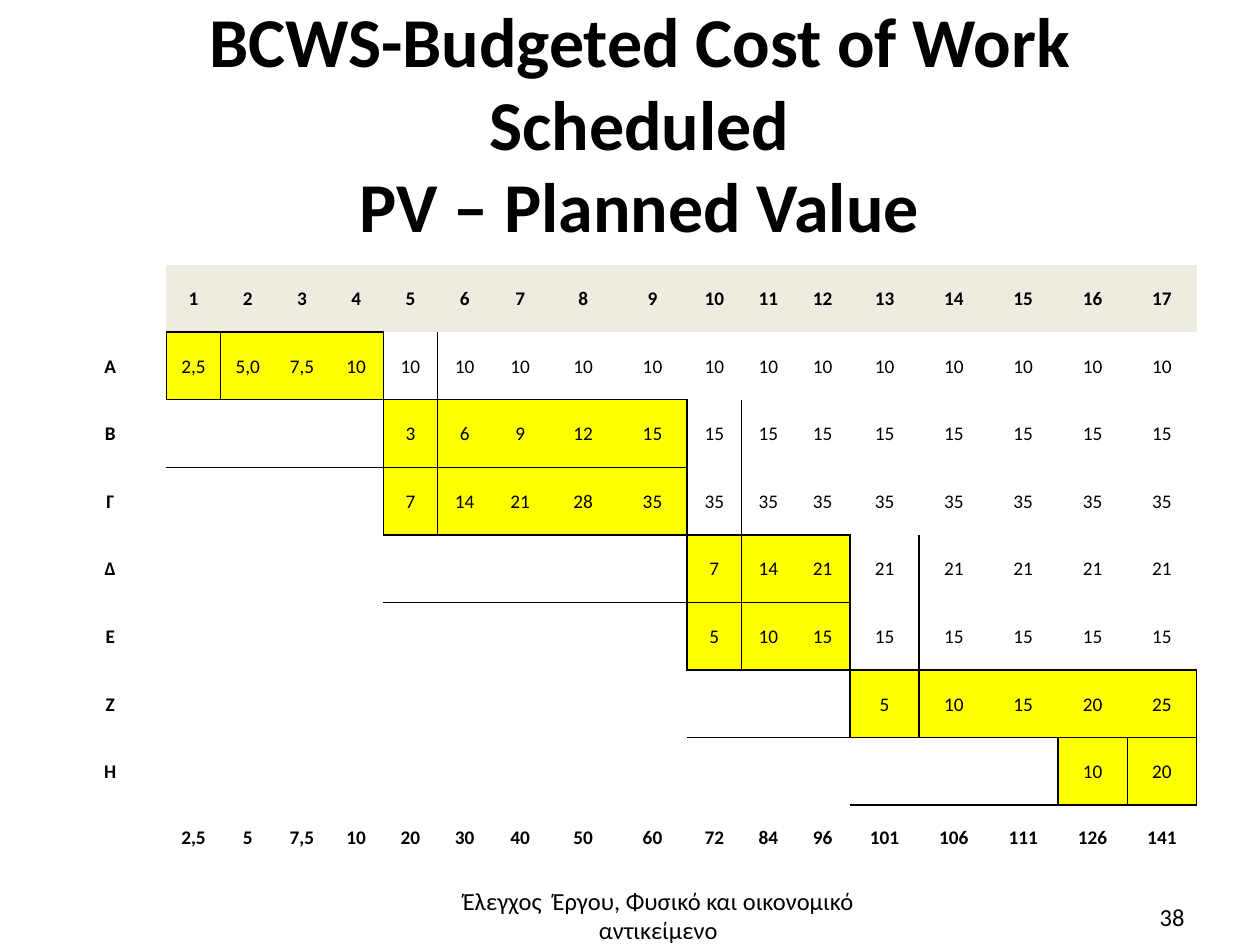
import pptx
import pptx.dml.color
import pptx.enum.text
import pptx.oxml
import pptx.oxml.ns
import pptx.util

Inches = pptx.util.Inches
ALIGN = pptx.enum.text.PP_ALIGN
ANCHOR = pptx.enum.text.MSO_ANCHOR

BLACK = pptx.dml.color.RGBColor(0x00, 0x00, 0x00)
HEADER_FILL = pptx.dml.color.RGBColor(0xEE, 0xEC, 0xE1)
ACTIVE_FILL = pptx.dml.color.RGBColor(0xFF, 0xFF, 0x00)
FONT = "Calibri"
NO_STYLE_NO_GRID = "{2D5ABB26-0587-4C30-8999-92F81FD0307C}"

PERIODS = 17
# Activity, first active period, cumulative cost in each active period
ACTIVITIES = [
    ("Α", 1, ["2,5", "5,0", "7,5", "10"]),
    ("Β", 5, ["3", "6", "9", "12", "15"]),
    ("Γ", 5, ["7", "14", "21", "28", "35"]),
    ("Δ", 10, ["7", "14", "21"]),
    ("Ε", 10, ["5", "10", "15"]),
    ("Ζ", 13, ["5", "10", "15", "20", "25"]),
    ("Η", 16, ["10", "20"]),
]
TOTALS = ["2,5", "5", "7,5", "10", "20", "30", "40", "50", "60",
          "72", "84", "96", "101", "106", "111", "126", "141"]
COLUMN_WIDTHS = ([0.89] + [0.43] * 6 + [0.45] + [0.55] * 2
                 + [0.43] * 3 + [0.55] * 5)
TOTALS_HEIGHT = 0.51

# Border element, row step and column step to the neighbour on that side
SIDES = [("lnL", 0, -1), ("lnR", 0, 1), ("lnT", -1, 0), ("lnB", 1, 0)]


def write_text(frame, text, size=14, bold=False, align=ALIGN.CENTER, spacing=None):
    para = frame.paragraphs[0]
    para.text = text
    para.alignment = align
    if spacing:
        para.line_spacing = spacing
    for span in para.runs:
        span.font.name = FONT
        span.font.size = pptx.util.Pt(size)
        span.font.bold = bold
        span.font.color.rgb = BLACK


def add_text_box(page, left, top, width, height):
    box = page.shapes.add_textbox(Inches(left), Inches(top), Inches(width), Inches(height))
    box.text_frame.word_wrap = True
    box.text_frame.auto_size = pptx.enum.text.MSO_AUTO_SIZE.NONE
    return box.text_frame


def add_title(page, left, top, width, height):
    frame = add_text_box(page, left, top, width, height)
    frame.vertical_anchor = ANCHOR.MIDDLE
    frame.margin_left = frame.margin_right = frame.margin_bottom = 0
    frame.margin_top = Inches(0.02)
    write_text(frame, "BCWS-Budgeted Cost of Work Scheduled\nPV – Planned Value",
               size=40, bold=True, spacing=0.98)


def schedule_rows():
    """Return the table's text, each finished activity keeping its last value."""
    rows = [[""] + [str(period) for period in range(1, PERIODS + 1)]]
    for label, start, costs in ACTIVITIES:
        after = PERIODS - (start - 1) - len(costs)
        rows.append([label] + [""] * (start - 1) + costs + [costs[-1]] * after)
    rows.append([""] + TOTALS)
    return rows


def is_active(row, column):
    if not 1 <= row <= len(ACTIVITIES):
        return False
    _, start, costs = ACTIVITIES[row - 1]
    return start <= column < start + len(costs)


def add_borders(cell, row, column):
    """Draw the lines where the active bar of an activity meets this cell."""
    properties = cell._tc.get_or_add_tcPr()
    for name, row_step, column_step in SIDES:
        here = is_active(row, column)
        beside = is_active(row + row_step, column + column_step)
        inside_bar = here and beside and column_step
        if (here or beside) and not inside_bar:
            properties.append(pptx.oxml.parse_xml(
                f'<a:{name} {pptx.oxml.ns.nsdecls("a")} w="12700">'
                f'<a:solidFill><a:srgbClr val="{BLACK}"/></a:solidFill></a:{name}>'))


def fill_cell(cell, row, column, text, bold):
    add_borders(cell, row, column)
    if is_active(row, column):
        cell.fill.solid()
        cell.fill.fore_color.rgb = ACTIVE_FILL
    elif row == 0 and column > 0:
        cell.fill.solid()
        cell.fill.fore_color.rgb = HEADER_FILL
    else:
        cell.fill.background()
    if text:
        cell.vertical_anchor = ANCHOR.MIDDLE
        cell.margin_left = cell.margin_right = cell.margin_top = Inches(0.01)
        cell.margin_bottom = 0
        write_text(cell.text_frame, text, size=11, bold=bold)


def add_schedule_table(page, left, top, width, height):
    rows = schedule_rows()
    last = len(rows) - 1
    table = page.shapes.add_table(len(rows), PERIODS + 1, Inches(left), Inches(top),
                                  Inches(width), Inches(height)).table
    table.first_row = table.horz_banding = False
    table._tbl.tblPr.find(pptx.oxml.ns.qn("a:tableStyleId")).text = NO_STYLE_NO_GRID
    for column, share in zip(table.columns, COLUMN_WIDTHS):
        column.width = Inches(share * width / sum(COLUMN_WIDTHS))
    for row in table.rows:
        row.height = Inches((height - TOTALS_HEIGHT) / last)
    table.rows[last].height = Inches(TOTALS_HEIGHT)
    for row, texts in enumerate(rows):
        for column, text in enumerate(texts):
            bold = row in (0, last) or column == 0
            fill_cell(table.cell(row, column), row, column, text, bold)


def add_footer(page, left, top, width, height):
    frame = add_text_box(page, left, top, width, height)
    write_text(frame, "Έλεγχος  Έργου, Φυσικό και οικονομικό αντικείμενο")


def add_page_number(page, left, top, width, height):
    frame = add_text_box(page, left, top, width, height)
    write_text(frame, "38", align=ALIGN.RIGHT)


def main():
    deck = pptx.Presentation()
    deck.slide_width = Inches(10)
    deck.slide_height = Inches(7.5)
    page = deck.slides.add_slide(deck.slide_layouts[6])
    add_title(page, 0.51, 0.09, 9.13, 1.79)
    add_schedule_table(page, 0.43, 2.1, 9.07, 4.8)
    add_footer(page, 3.48, 6.98, 3.49, 0.55)
    add_page_number(page, 7.17, 7.11, 2.33, 0.4)
    deck.save("out.pptx")


if __name__ == "__main__":
    main()
